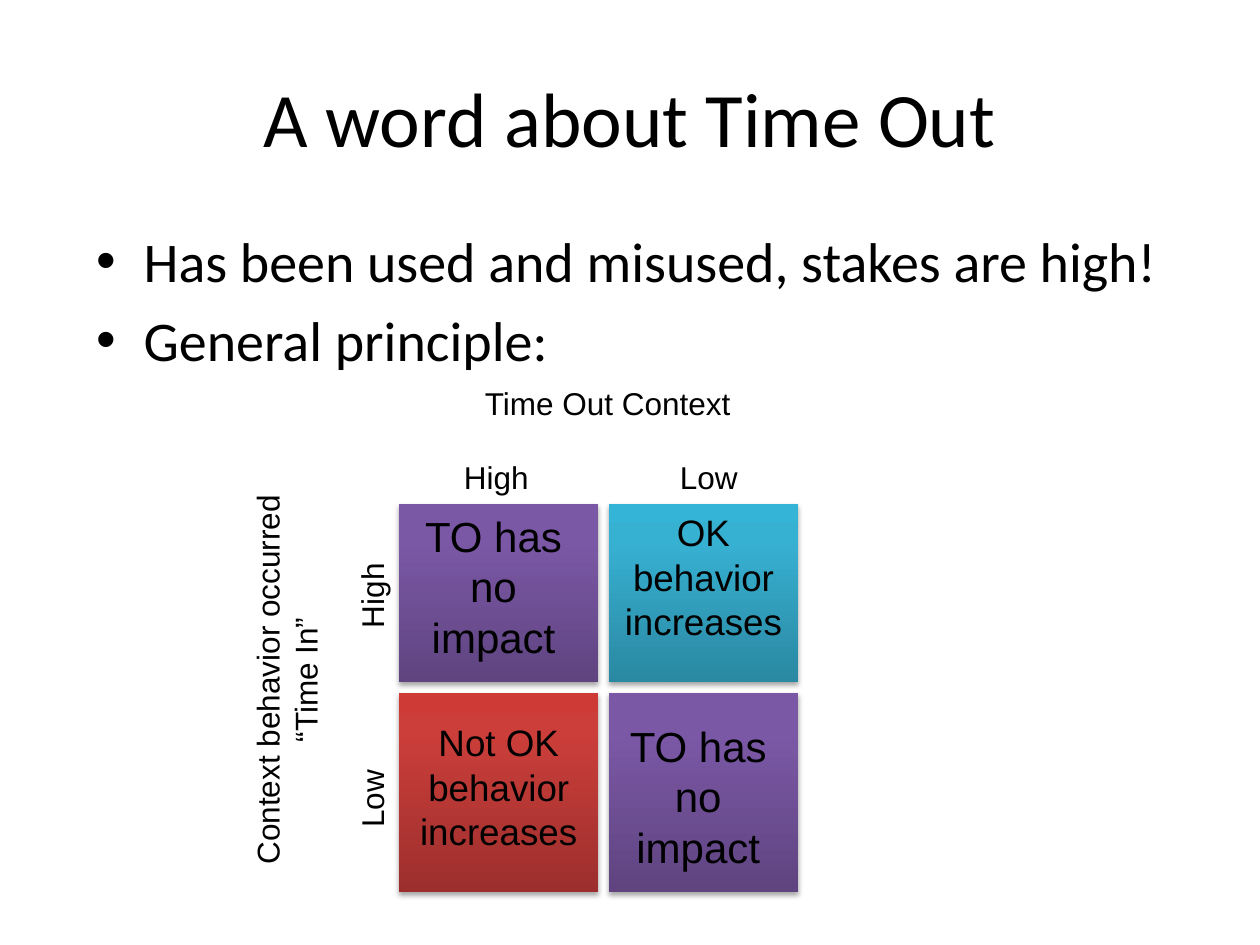
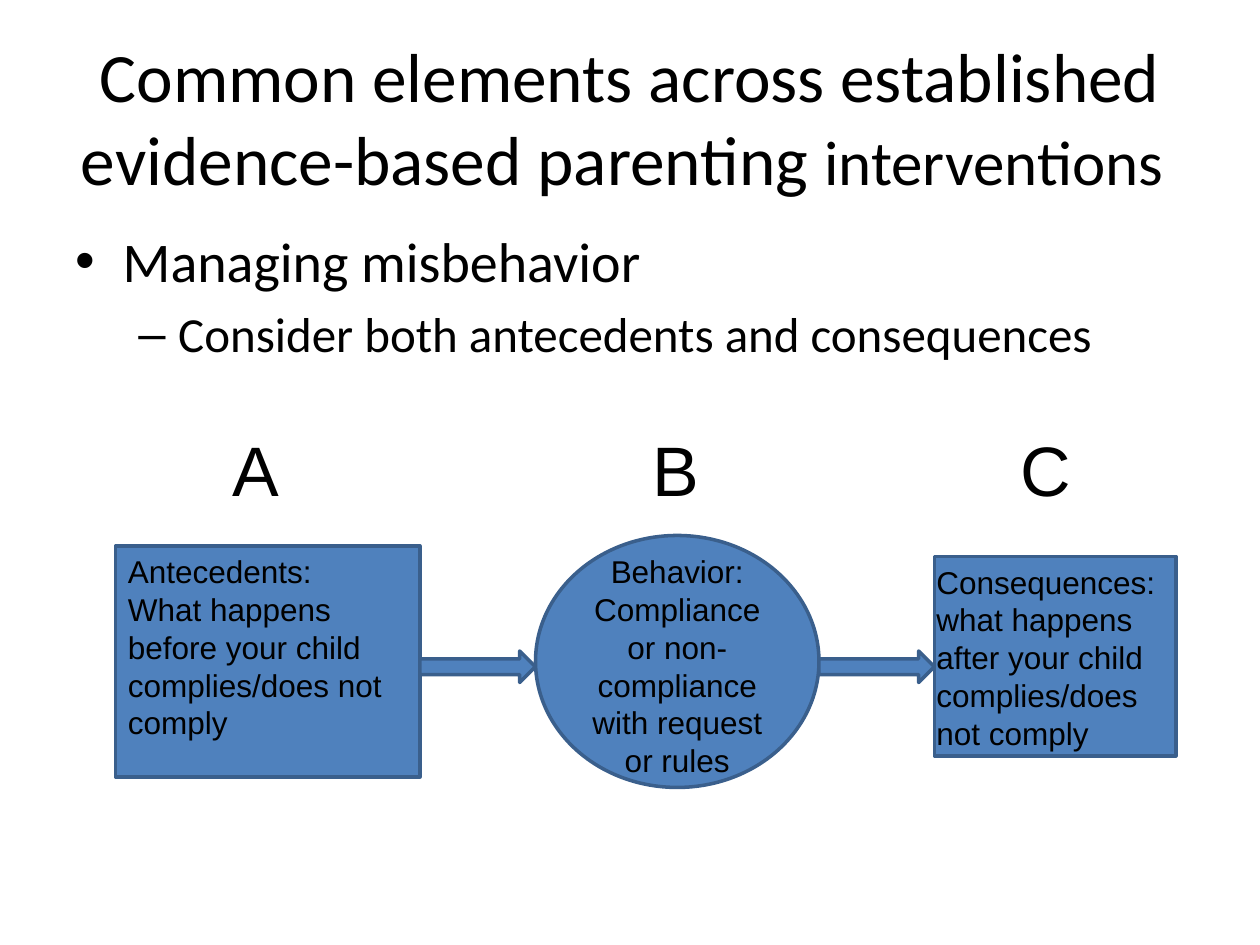
"""Build two slides on time out and on the antecedent, behavior, consequence chain."""
from lxml import etree
from pptx import Presentation
from pptx.dml.color import RGBColor
from pptx.enum.shapes import MSO_SHAPE
from pptx.enum.text import MSO_ANCHOR, PP_ALIGN
from pptx.oxml.ns import qn
from pptx.util import Emu, Pt

RECT, OVAL, ARROW = MSO_SHAPE.RECTANGLE, MSO_SHAPE.OVAL, MSO_SHAPE.RIGHT_ARROW
LEFT, MID = PP_ALIGN.LEFT, PP_ALIGN.CENTER
TOP, CENTER = MSO_ANCHOR.TOP, MSO_ANCHOR.MIDDLE
PX = 7620
HEAD, BODY = "Calibri", "Arial"

COLORS = {"ink": "000000", "fill": "4F81BD", "edge": "3A5F8C"}
FADES = {
    "purple": ("5F4480", "7B58A6", "7C57A8"),
    "teal": ("2A88A2", "37B1D2", "34B4D6"),
    "red": ("9C2F2D", "CB3E3A", "CE3B37"),
}
STOPS = (0, 80, 100)
MARKS = [("•", 45, 45), ("–", 98, 38)]

TITLE_BOX = (60, 36, 1080, 150)
TITLES = [
    "A word about Time Out",
    [[("Common elements across established evidence-based parenting ", 39.6),
      ("interventions", 36), (" ", 39.6)]],
]
POINTS = [
    ((80, 210, 1120, 690),
     [(0, "Has been used and misused, stakes are high!", 32),
      (0, "General principle:", 32)]),
    ((60, 210, 1080, 594),
     [(0, "Managing misbehavior", 32),
      (1, "Consider both antecedents and consequences", 28)]),
]

COLS = [(380, 190), (580, 180)]
ROWS = [(480, 170, 480), (660, 190, 680)]
GRID = [
    [("purple", "TO has no impact", 24, 390, 160),
     ("teal", "OK behavior increases", 21, 580, 180)],
    [("red", "Not OK behavior increases", 21, 380, 190),
     ("purple", "TO has no impact", 24, 580, 170)],
]
LABELS = [
    (["Context behavior occurred", "“Time In”"], (81, 599, 396, 97), MID, 270),
    ("Time Out Context", (450, 360, 396, 60), LEFT, 0),
    ("High", (430, 430, 130, 50), LEFT, 0),
    ("Low", (610, 430, 130, 50), MID, 0),
    ("High", (290, 520, 130, 50), LEFT, 270),
    ("Low", (290, 710, 130, 50), LEFT, 270),
]

STAGES = [
    ("A", 210, RECT, (110, 520, 290, 220), (110, 520, 290, 194), LEFT,
     ["Antecedents:", "What happens before your child complies/does not comply"]),
    ("B", 610, OVAL, (510, 510, 270, 240), (540, 520, 210, 230), MID,
     "Behavior: Compliance or non-compliance with request or rules"),
    ("C", 960, RECT, (890, 530, 230, 190), (880, 530, 240, 230), LEFT,
     "Consequences: what happens after your child complies/does not comply"),
]


def rgb(name):
    return RGBColor.from_string(COLORS[name])


def place(box):
    return [Emu(n * PX) for n in box]


def node(parent, tag, **attrs):
    return etree.SubElement(parent, qn("a:" + tag), {k: str(v) for k, v in attrs.items()})


def write(slide, text, box, size=18, font=BODY, align=LEFT, anchor=TOP, turn=0, levels=()):
    area = slide.shapes.add_textbox(*place(box))
    area.rotation = turn
    frame = area.text_frame
    frame.word_wrap = True
    frame.vertical_anchor = anchor
    for i, line in enumerate([text] if isinstance(text, str) else text):
        para = frame.paragraphs[0] if i == 0 else frame.add_paragraph()
        para.alignment = align
        runs = [(line, size)] if isinstance(line, str) else line
        for words, pts in runs:
            run = para.add_run()
            run.text = words
            run.font.name, run.font.size = font, Pt(pts)
            run.font.color.rgb = rgb("ink")
        if levels:
            mark, left, hang = MARKS[levels[i]]
            para.space_before = Pt(runs[0][1] * 0.2)
            props = para._p.get_or_add_pPr()
            props.set("marL", str(left * PX))
            props.set("indent", str(-hang * PX))
            node(props, "buFont", typeface="Arial")
            node(props, "buChar", char=mark)


def draw(slide, kind, box):
    shape = slide.shapes.add_shape(kind, *place(box))
    shape.shadow.inherit = False
    shape.fill.solid()
    shape.fill.fore_color.rgb = rgb("fill")
    shape.line.color.rgb = rgb("edge")
    shape.line.width = Pt(2)
    return shape


def shade(shape, fade):
    shape.line.fill.background()
    props = shape._element.spPr
    solid = props.find(qn("a:solidFill"))
    grad = etree.Element(qn("a:gradFill"), rotWithShape="1")
    stops = node(grad, "gsLst")
    for pos, color in zip(STOPS, FADES[fade]):
        node(node(stops, "gs", pos=pos * 1000), "srgbClr", val=color)
    node(grad, "lin", ang=270 * 60000, scaled=0)
    props.replace(solid, grad)
    cast = node(props.find(qn("a:effectLst")), "outerShdw", blurRad=Pt(3.1),
                dist=Pt(1.8), dir=90 * 60000, rotWithShape=0)
    node(node(cast, "srgbClr", val=COLORS["ink"]), "alpha", val=35000)


def start(deck, title, points):
    slide = deck.slides.add_slide(deck.slide_layouts[6])
    write(slide, title, TITLE_BOX, size=44, font=HEAD, align=MID, anchor=CENTER)
    box, items = points
    write(slide, [[(words, size)] for _, words, size in items], box,
          font=HEAD, levels=[level for level, _, _ in items])
    return slide


def matrix(slide):
    for (y, high, top), cells in zip(ROWS, GRID):
        for (x, wide), (fade, words, size, left, span) in zip(COLS, cells):
            shade(draw(slide, RECT, (x, y, wide, high)), fade)
            write(slide, words, (left, top, span, 150), size=size, align=MID)
    for words, box, align, turn in LABELS:
        write(slide, words, box, align=align, turn=turn)


def chain(slide):
    for letter, x, kind, box, area, align, words in STAGES:
        draw(slide, kind, box)
        write(slide, words, area, align=align)
        write(slide, letter, (x, 400, 110, 92), size=40)
    for prior, after in zip(STAGES, STAGES[1:]):
        end = prior[3][0] + prior[3][2]
        draw(slide, ARROW, (end, 620, after[3][0] - end, 30))


def main():
    deck = Presentation()
    deck.slide_width, deck.slide_height = place((1200, 900))
    for title, points, fill in zip(TITLES, POINTS, (matrix, chain)):
        fill(start(deck, title, points))
    deck.save("out.pptx")


if __name__ == "__main__":
    main()
